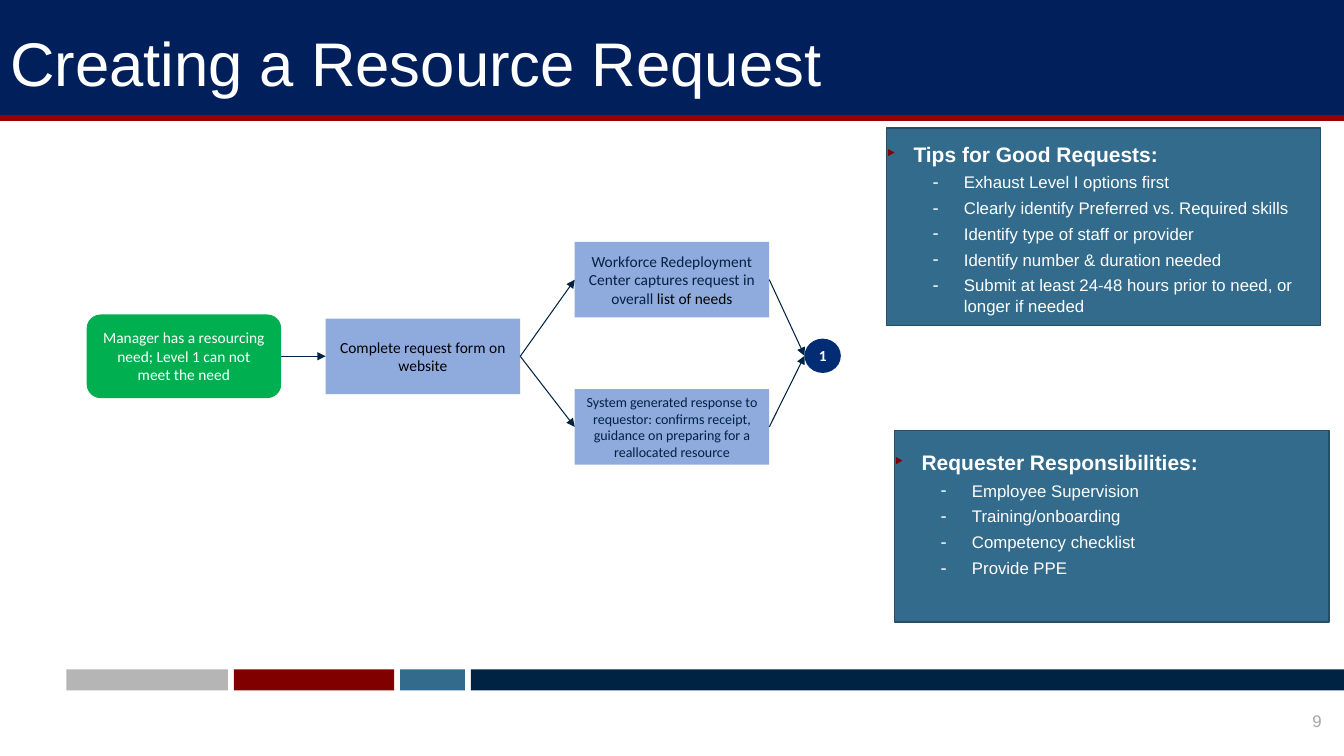
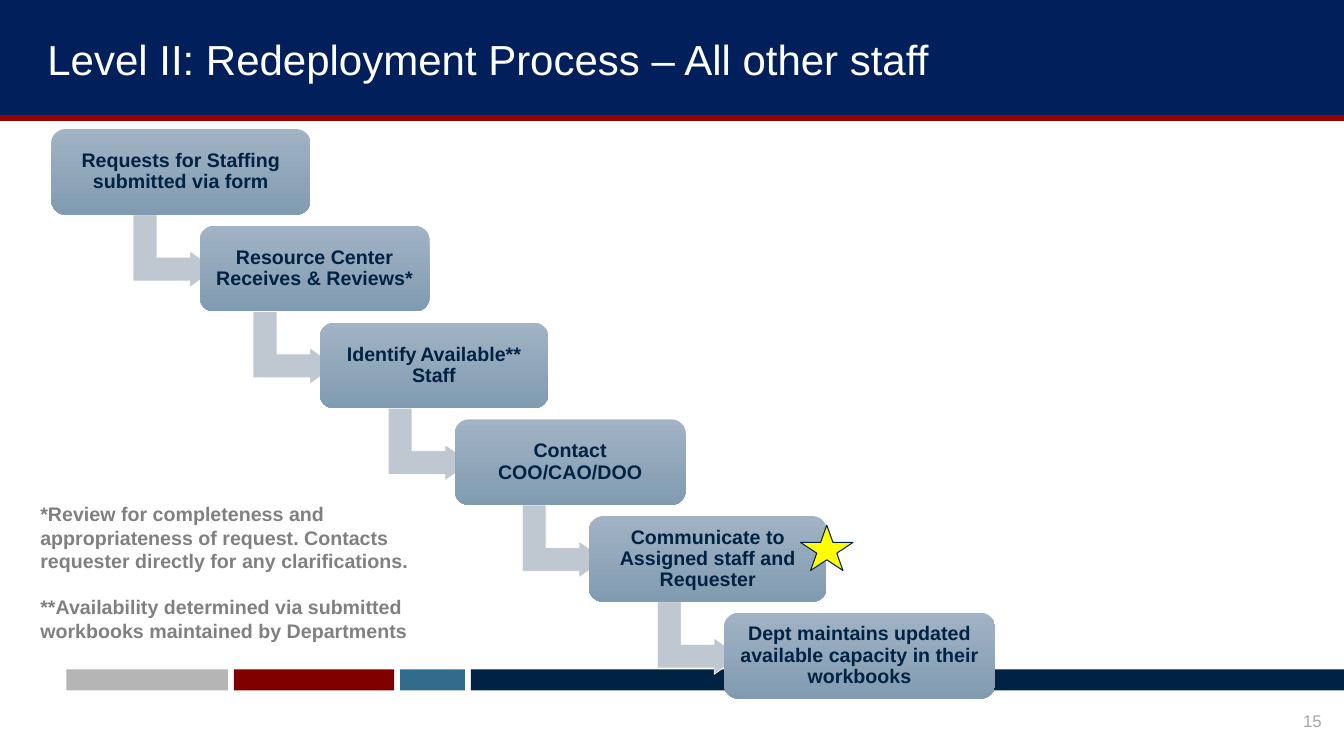
from lxml import etree
from pptx import Presentation
from pptx.dml.color import RGBColor
from pptx.enum.shapes import MSO_CONNECTOR, MSO_SHAPE
from pptx.enum.text import MSO_ANCHOR, MSO_AUTO_SIZE, PP_ALIGN
from pptx.oxml.ns import qn
from pptx.util import Inches, Pt

# Enum members
RECTANGLE = MSO_SHAPE.RECTANGLE
ROUNDED = MSO_SHAPE.ROUNDED_RECTANGLE
ELLIPSE = MSO_SHAPE.OVAL
STAR = MSO_SHAPE.STAR_5_POINT
BENT_ARROW = MSO_SHAPE.BENT_UP_ARROW
STRAIGHT = MSO_CONNECTOR.STRAIGHT
LEFT, CENTER, RIGHT = PP_ALIGN.LEFT, PP_ALIGN.CENTER, PP_ALIGN.RIGHT
TOP, MIDDLE, BOTTOM = MSO_ANCHOR.TOP, MSO_ANCHOR.MIDDLE, MSO_ANCHOR.BOTTOM

# Colours
WHITE = RGBColor(0xFF, 0xFF, 0xFF)
BLACK = RGBColor(0x00, 0x00, 0x00)
BAND_BLUE = RGBColor(0x01, 0x1F, 0x5B)
BAND_RED = RGBColor(0x99, 0x00, 0x00)
NAVY = RGBColor(0x00, 0x22, 0x43)
TEAL = RGBColor(0x32, 0x6B, 0x8B)
TEAL_EDGE = RGBColor(0x25, 0x4F, 0x67)
MAROON = RGBColor(0x80, 0x00, 0x00)
BAR_GREY = RGBColor(0xB4, 0xB5, 0xB4)
NUMBER_GREY = RGBColor(0xA6, 0xA6, 0xA6)
NOTE_GREY = RGBColor(0x80, 0x80, 0x80)
NODE_BLUE = RGBColor(0x8F, 0xAA, 0xDC)
START_GREEN = RGBColor(0x00, 0xB0, 0x50)
JOIN_BLUE = RGBColor(0x02, 0x2D, 0x75)
STEP_LIGHT = RGBColor(0xA1, 0xB3, 0xC4)
STEP_DARK = RGBColor(0x81, 0x9B, 0xB1)
ARROW_GREY = RGBColor(0xBF, 0xC7, 0xD0)
YELLOW = RGBColor(0xFF, 0xFF, 0x00)

SLIDE_WIDTH, SLIDE_HEIGHT = 13.33, 7.5
BAND_HEIGHT = 1.17
FOOTER_BARS = [(0.66, 1.6, BAR_GREY), (2.32, 1.59, MAROON),
               (3.97, 0.64, TEAL), (4.67, 8.66, NAVY)]

TIPS = ["Exhaust Level I options first",
        "Clearly identify Preferred vs. Required skills",
        "Identify type of staff or provider",
        "Identify number & duration needed",
        "Submit at least 24-48 hours prior to need, or longer if needed"]
RESPONSIBILITIES = ["Employee Supervision", "Training/onboarding",
                    "Competency checklist", "Provide PPE"]

# Left edge, width and text runs (text, size) of each step
STEPS = [
    (0.51, 2.57, [("Requests for Staffing submitted via form", 14)]),
    (1.98, 2.28, [("Resource Center Receives & Reviews*", 14)]),
    (3.17, 2.27, [("Identify", 14), (" ", 9), ("Available** Staff", 14)]),
    (4.51, 2.29, [("Contact COO/CAO/DOO", 14)]),
    (5.84, 2.36, [("Communicate to Assigned staff and Requester", 14)]),
    (7.18, 2.69, [("Dept maintains updated available capacity in their workbooks", 14)]),
]
STEP_TOP, STEP_PITCH, STEP_HEIGHT = 1.28, 0.96, 0.85


# Text
def write(paragraph, text, size=14, color=WHITE, font="Arial", bold=False,
          align=LEFT, before=0, after=0, spacing=1.0):
    """Add one formatted run to a paragraph."""
    paragraph.alignment = align
    paragraph.space_before, paragraph.space_after = Pt(before), Pt(after)
    paragraph.line_spacing = spacing
    run = paragraph.add_run()
    run.text = text
    run.font.name, run.font.size = font, Pt(size)
    run.font.bold = bold
    run.font.color.rgb = color


def prepare_frame(shape, anchor=MIDDLE, horizontal=0.1, vertical=0.05):
    """Set wrapping, anchor and insets; return the first paragraph."""
    frame = shape.text_frame
    frame.word_wrap = True
    frame.auto_size = MSO_AUTO_SIZE.NONE
    frame.vertical_anchor = anchor
    frame.margin_left = frame.margin_right = Inches(horizontal)
    frame.margin_top = frame.margin_bottom = Inches(vertical)
    return frame.paragraphs[0]


def add_bullet(paragraph, character, color, percent, margin, hanging):
    properties = paragraph._p.get_or_add_pPr()
    properties.set("marL", str(Inches(margin)))
    properties.set("indent", str(-Inches(hanging)))
    bullet_color = etree.SubElement(properties, qn("a:buClr"))
    etree.SubElement(bullet_color, qn("a:srgbClr"), val=str(color))
    etree.SubElement(properties, qn("a:buSzPct"), val=str(percent * 1000))
    etree.SubElement(properties, qn("a:buFont"), typeface="Arial")
    etree.SubElement(properties, qn("a:buChar"), char=character)


# Shapes and lines
def add_box(slide, kind, left, top, width, height, fill, line=None, line_width=0.75):
    shape = slide.shapes.add_shape(kind, Inches(left), Inches(top),
                                   Inches(width), Inches(height))
    shape.shadow.inherit = False
    shape.fill.solid()
    shape.fill.fore_color.rgb = fill
    if line is None:
        shape.line.fill.background()
    else:
        shape.line.color.rgb = line
        shape.line.width = Pt(line_width)
    return shape


def add_textbox(slide, left, top, width, height):
    return slide.shapes.add_textbox(Inches(left), Inches(top),
                                    Inches(width), Inches(height))


def add_line(slide, start, end, color, width):
    connector = slide.shapes.add_connector(STRAIGHT, *start, *end)
    connector.line.color.rgb = color
    connector.line.width = Pt(width)
    etree.SubElement(connector._element.spPr, qn("a:effectLst"))
    return connector


def add_arrow(slide, source, target):
    """Arrow from the right side of one node to the left side of the next."""
    start = (source.left + source.width, source.top + source.height // 2)
    end = (target.left, target.top + target.height // 2)
    connector = add_line(slide, start, end, NAVY, 0.75)
    etree.SubElement(connector.line._get_or_add_ln(), qn("a:tailEnd"), type="triangle")
    connector.begin_connect(source, 3)
    if target.auto_shape_type != ELLIPSE:
        connector.end_connect(target, 1)


def add_node(slide, kind, left, top, width, height, fill, runs, size=11):
    node = add_box(slide, kind, left, top, width, height, fill)
    paragraph = prepare_frame(node)
    for text, color in runs:
        write(paragraph, text, size=size, color=color, font="Calibri", align=CENTER)
    return node


def add_panel(slide, left, top, height, inset, heading, items):
    panel = add_box(slide, RECTANGLE, left, top, 4.31, height, TEAL, TEAL_EDGE, 1)
    paragraph = prepare_frame(panel, TOP, 0, inset)
    add_bullet(paragraph, "‣", MAROON, 120, 0.27, 0.27)
    write(paragraph, heading, size=15, bold=True, after=2)
    for item in items:
        paragraph = panel.text_frame.add_paragraph()
        add_bullet(paragraph, "-", WHITE, 110, 0.77, 0.31)
        write(paragraph, item, size=12, before=2, after=2)


def add_step(slide, left, top, width, runs):
    step = add_box(slide, ROUNDED, left, top, width, STEP_HEIGHT, STEP_LIGHT)
    step.fill.gradient()
    step.fill.gradient_angle = 270
    for stop, color in zip(step.fill.gradient_stops, (STEP_LIGHT, STEP_DARK)):
        stop.color.rgb = color
    paragraph = prepare_frame(step, MIDDLE, 0.06, 0.06)
    for text, size in runs:
        write(paragraph, text, size=size, color=NAVY, bold=True,
              align=CENTER, spacing=0.9)


def add_bent_arrow(slide, left, top):
    arrow = add_box(slide, BENT_ARROW, left, top, 0.72, 0.82, ARROW_GREY, WHITE, 0.5)
    arrow.rotation = 90
    for index, value in enumerate((0.328, 0.25, 0.358)):
        arrow.adjustments[index] = value


# Shared slide frame
def add_base_slide(presentation, title, number, title_left, title_top,
                   title_height, title_size):
    slide = presentation.slides.add_slide(presentation.slide_layouts[5])
    for left, width, color in FOOTER_BARS:
        add_box(slide, RECTANGLE, left, 6.64, width, 0.21, color)
    number_box = add_textbox(slide, 12.77, 7.05, 0.34, 0.2)
    write(prepare_frame(number_box, BOTTOM, 0, 0), number, size=12,
          color=NUMBER_GREY, align=RIGHT)

    add_box(slide, RECTANGLE, 0, 0, SLIDE_WIDTH, BAND_HEIGHT, BAND_BLUE)
    add_line(slide, (0, Inches(BAND_HEIGHT)),
             (Inches(SLIDE_WIDTH), Inches(BAND_HEIGHT)), BAND_RED, 4.5)

    placeholder = slide.shapes.title
    placeholder.left, placeholder.top = Inches(title_left), Inches(title_top)
    placeholder.width, placeholder.height = Inches(12.11), Inches(title_height)
    write(prepare_frame(placeholder, MIDDLE, 0, 0), title, size=title_size)
    # Bring the title in front of the band
    placeholder.element.getparent().append(placeholder.element)
    return slide


# Slides
def build_request_slide(presentation):
    slide = add_base_slide(presentation, "Creating a Resource Request", "9",
                           0.1, 0.03, 1.17, 44)
    # Flow chart
    need = add_node(slide, ROUNDED, 0.86, 3.12, 1.93, 0.83, START_GREEN,
                    [("Manager has a resourcing need; Level 1 can not meet the need", WHITE)])
    form = add_node(slide, RECTANGLE, 3.23, 3.16, 1.93, 0.75, NODE_BLUE,
                    [("Complete request form on website", BLACK)])
    capture = add_node(slide, RECTANGLE, 5.7, 2.4, 1.93, 0.75, NODE_BLUE,
                       [("Workforce Redeployment Center captures request in overall ", NAVY),
                        ("list of needs", BLACK)])
    response = add_node(slide, RECTANGLE, 5.7, 3.86, 1.93, 0.75, NODE_BLUE,
                        [("System generated response to requestor: confirms receipt, "
                          "guidance on preparing for a reallocated resource", NAVY)], size=10)
    join = add_box(slide, ELLIPSE, 7.98, 3.36, 0.36, 0.34, JOIN_BLUE)
    write(prepare_frame(join, MIDDLE, 0, 0), "1", size=11, font="Calibri",
          bold=True, align=CENTER)
    for source, target in [(need, form), (form, capture), (form, response),
                           (capture, join), (response, join)]:
        add_arrow(slide, source, target)
    # Side panels
    add_panel(slide, 8.79, 1.27, 1.96, 0.13, "Tips for Good Requests:", TIPS)
    add_panel(slide, 8.87, 4.27, 1.9, 0.19, "Requester Responsibilities:", RESPONSIBILITIES)


def build_process_slide(presentation):
    slide = add_base_slide(presentation, "Level II: Redeployment Process – All other staff",
                           "15", 0.47, 0.33, 0.5, 30)
    # Staircase of steps, each arrow leading into the next step
    for index, (left, width, runs) in enumerate(STEPS):
        top = STEP_TOP + index * STEP_PITCH
        if index + 1 < len(STEPS):
            add_bent_arrow(slide, STEPS[index + 1][0] - 0.61, top + 0.8)
        add_step(slide, left, top, width, runs)
    add_box(slide, STAR, 7.94, 5.21, 0.52, 0.45, YELLOW, NAVY)
    # Footnotes
    notes = add_textbox(slide, 0.4, 4.96, 3.96, 1.41)
    write(prepare_frame(notes, BOTTOM, 0, 0),
          "*Review for completeness and appropriateness of request. "
          "Contacts requester directly for any clarifications.",
          color=NOTE_GREY, bold=True)
    write(notes.text_frame.add_paragraph(),
          "**Availability determined via submitted workbooks maintained by Departments",
          color=NOTE_GREY, bold=True, before=16)


def main():
    presentation = Presentation()
    presentation.slide_width = Inches(SLIDE_WIDTH)
    presentation.slide_height = Inches(SLIDE_HEIGHT)
    build_request_slide(presentation)
    build_process_slide(presentation)
    presentation.save("out.pptx")


if __name__ == "__main__":
    main()
